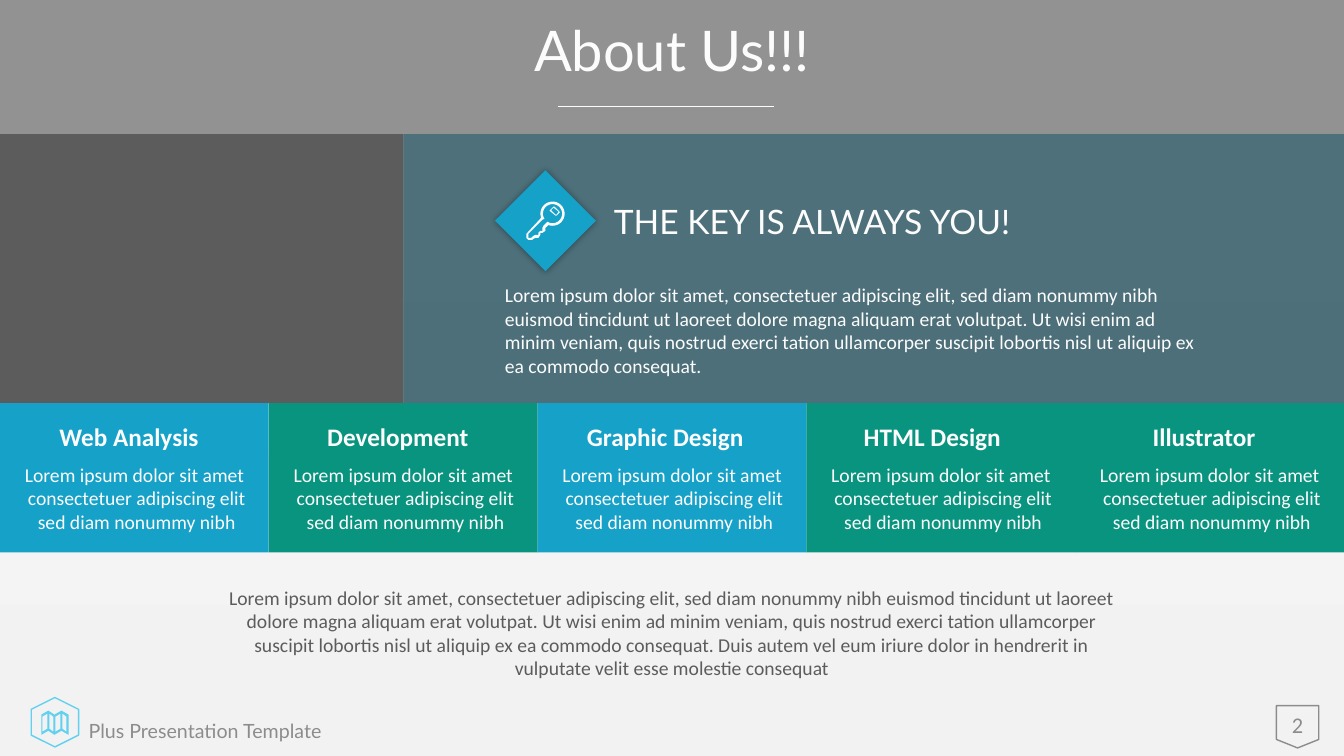
from dataclasses import dataclass
from math import cos, radians, sin

from lxml.etree import SubElement
from pptx import Presentation
from pptx.dml.color import RGBColor
from pptx.enum.shapes import MSO_CONNECTOR, MSO_SHAPE
from pptx.enum.text import MSO_ANCHOR, MSO_AUTO_SIZE, PP_ALIGN
from pptx.oxml.ns import qn
from pptx.util import Pt

PX = 9144
PAGE_WIDTH, PAGE_HEIGHT = 1333, 750

WHITE = RGBColor(0xFC, 0xFC, 0xFC)
PALE = RGBColor(0xF2, 0xF2, 0xF2)
BLACK = RGBColor(0x00, 0x00, 0x00)
DARK = RGBColor(0x20, 0x20, 0x20)
SLATE = RGBColor(0x5C, 0x5C, 0x5C)
GREY = RGBColor(0x8C, 0x8C, 0x8C)
TEAL = RGBColor(0x0B, 0x50, 0x64)
BLUE = RGBColor(0x15, 0xA1, 0xC8)
GREEN = RGBColor(0x09, 0x94, 0x80)
SKY = RGBColor(0x62, 0xD0, 0xEF)

HERO_TEXT = (
    "Lorem ipsum dolor sit amet, consectetuer adipiscing elit, sed diam nonummy nibh "
    "euismod tincidunt ut laoreet dolore magna aliquam erat volutpat. Ut wisi enim ad "
    "minim veniam, quis nostrud exerci tation ullamcorper suscipit lobortis nisl ut "
    "aliquip ex ea commodo consequat."
)
SUMMARY_TEXT = (
    HERO_TEXT + " Duis autem vel eum iriure dolor in hendrerit in vulputate velit esse "
    "molestie consequat"
)
CARD_TEXT = (
    "Lorem ipsum dolor sit amet\n consectetuer adipiscing elit\n sed diam nonummy nibh"
)
CARDS = [
    ("Web Analysis", BLUE, 49, 159),
    ("Development", GREEN, 48, 161),
    ("Graphic Design", BLUE, 39, 177),
    ("HTML Design", GREEN, 47, 157),
    ("Illustrator", GREEN, 67, 123),
]


@dataclass
class Box:
    """A rectangle on the page, in px."""

    left: float
    top: float
    width: float
    height: float

    def inner(self, left, top, width, height):
        """Return a box placed relative to this one."""
        return Box(self.left + left, self.top + top, width, height)

    def emu(self):
        """Return left, top, width and height in EMU."""
        return [round(n * PX) for n in (self.left, self.top, self.width, self.height)]


def write_text(frame, text, size, color, font="Calibri", bold=False,
               align=PP_ALIGN.LEFT, spacing=None):
    """Fill a text frame, one paragraph per line of text."""
    for index, line in enumerate(text.split("\n")):
        para = frame.add_paragraph() if index else frame.paragraphs[0]
        para.alignment = align
        para.line_spacing = spacing
        span = para.add_run()
        span.text = line
        span.font.size = Pt(size)
        span.font.name = font
        span.font.bold = bold
        span.font.color.rgb = color


def add_text(page, box, text, wrap=True, **text_format):
    """Add a text box that grows with its text."""
    frame = page.shapes.add_textbox(*box.emu()).text_frame
    frame.word_wrap = wrap
    frame.auto_size = MSO_AUTO_SIZE.SHAPE_TO_FIT_TEXT
    write_text(frame, text, **text_format)
    return frame


def paint(shape, fill=None, line=None, alpha=None):
    """Set the fill, outline and opacity of a shape."""
    shape.shadow.inherit = False
    if fill is None:
        shape.fill.background()
    else:
        shape.fill.solid()
        shape.fill.fore_color.rgb = fill
    if line is None:
        shape.line.fill.background()
    else:
        shape.line.color.rgb = line
        shape.line.width = Pt(1)
    if alpha is not None:
        color = shape.element.spPr.find(qn("a:solidFill")).find(qn("a:srgbClr"))
        SubElement(color, qn("a:alpha"), val=str(alpha * 1000))


def add_block(page, box, kind=MSO_SHAPE.RECTANGLE, **look):
    """Add a painted preset shape."""
    shape = page.shapes.add_shape(kind, *box.emu())
    paint(shape, **look)
    return shape


def add_icon(page, box, contours, color):
    """Add a filled outline whose inner contours are holes."""
    scaled = [[(x * PX, y * PX) for x, y in contour] for contour in contours]
    builder = page.shapes.build_freeform(*scaled[0][0], scale=1.0)
    for index, contour in enumerate(scaled):
        if index:
            builder.move_to(*contour[0])
        builder.add_line_segments(contour[1:], close=True)
    paint(builder.convert_to_shape(*box.emu()[:2]), fill=color)


def arc(radius, start, end):
    """Return points along the round bow of the key."""
    steps = 36
    angles = [radians(start + (end - start) * n / steps) for n in range(steps + 1)]
    return [(26 + radius * cos(a), 12 + radius * sin(a)) for a in angles]


def add_shadow(shape):
    """Give a shape a soft shadow all around."""
    effects = shape.element.spPr.find(qn("a:effectLst"))
    shadow = SubElement(effects, qn("a:outerShdw"), blurRad=str(int(Pt(5))), dist="0",
                        algn="ctr", rotWithShape="0")
    color = SubElement(shadow, qn("a:srgbClr"), val=str(BLACK))
    SubElement(color, qn("a:alpha"), val="40000")


def add_footer(page, box):
    """Place the map badge, footer text and page number."""
    add_block(page, box.inner(1266, 7, 42, 42),
              MSO_SHAPE.FLOWCHART_OFFPAGE_CONNECTOR, line=GREY)
    add_block(page, box.inner(30, 0, 49, 47), MSO_SHAPE.HEXAGON, line=SKY).rotation = 270
    sheet = [(0, 4), (7, 0), (13, 4), (20, 0), (27, 4),
             (27, 24), (20, 20), (13, 24), (7, 20), (0, 24)]
    folds = [(1, 6, 6, 3), (8, 12, 3, 6), (14, 19, 6, 3), (21, 25, 3, 6)]
    panes = [[(x1, y1), (x2, y2), (x2, y2 + 15), (x1, y1 + 15)]
             for x1, x2, y1, y2 in folds]
    add_icon(page, box.inner(41, 12, 27, 24), [sheet] + panes, SKY)
    add_text(page, box.inner(78, 15, 255, 34), "Plus Presentation Template",
             wrap=False, size=14, font="Lato", color=GREY)
    number = add_text(page, box.inner(1263, 5, 48, 42), "2", size=16, color=GREY,
                      align=PP_ALIGN.CENTER)
    number.auto_size = MSO_AUTO_SIZE.NONE
    number.vertical_anchor = MSO_ANCHOR.MIDDLE


def add_header(page, box):
    """Place the title and the rule under it."""
    title = page.shapes.title
    title.left, title.top, title.width, title.height = box.inner(201, 0, 931, 106).emu()
    title.text_frame.vertical_anchor = MSO_ANCHOR.MIDDLE
    write_text(title.text_frame, "About Us!!!", size=40, font="Lato", color=WHITE,
               align=PP_ALIGN.CENTER, spacing=0.9)
    left, top, width, _ = box.inner(553, 106, 215, 0).emu()
    rule = page.shapes.add_connector(MSO_CONNECTOR.STRAIGHT, left, top, left + width, top)
    rule.line.color.rgb = WHITE
    rule.line.width = Pt(0.5)
    SubElement(rule.element.spPr, qn("a:effectLst"))


def add_key_badge(page, box):
    """Place the key on its diamond."""
    add_shadow(add_block(page, box, MSO_SHAPE.DIAMOND, fill=BLUE))
    outer = arc(12, 160, 470) + [
        (19, 26), (19, 29), (16, 31), (14, 31), (14, 33), (12, 36), (9, 36),
        (7, 37), (6, 38), (2, 38), (0, 36), (0, 32)]
    inner = arc(9.5, 148, 482) + [
        (17, 24), (16, 26), (16, 29), (14, 29), (12, 31), (12, 33), (9, 33),
        (7, 34), (5, 36), (2, 36), (2, 32), (16, 18)]
    slot = [(33, 10), (28, 5), (27, 5), (24, 8), (23, 9), (29, 14), (30, 14), (33, 11)]
    slot_hole = [(29, 13), (25, 9), (25, 8), (27, 6), (32, 10), (30, 13)]
    add_icon(page, box.inner(31, 31, 38, 38), [outer, inner, slot, slot_hole], WHITE)


def add_hero(page, box):
    """Place the key message beside the grey panel."""
    add_block(page, box.inner(400, 0, box.width - 400, box.height), fill=TEAL, alpha=50)
    add_text(page, box.inner(599, 61, 416, 50), "THE KEY IS ALWAYS YOU!",
             wrap=False, size=24, font="Lato", color=WHITE)
    add_key_badge(page, box.inner(491, 36, 100, 100))
    add_text(page, box.inner(491, 143, 713, 104), HERO_TEXT, size=14, color=WHITE)
    add_block(page, box.inner(0, 0, 400, box.height), fill=SLATE)


def add_cards(page, box):
    """Place the row of service cards."""
    width = box.width / len(CARDS)
    for index, (name, color, name_left, name_width) in enumerate(CARDS):
        card = box.inner(index * width, 0, width, box.height)
        add_block(page, card, fill=color)
        add_text(page, card.inner(name_left, 13, name_width, 40), name, wrap=False,
                 size=18, color=WHITE, bold=True)
        add_text(page, card.inner(12, 54, 243, 81), CARD_TEXT, wrap=False,
                 size=14, color=WHITE, align=PP_ALIGN.CENTER)


def add_background(page):
    """Give the page a pale upward gradient."""
    fill = page.background.fill
    fill.gradient()
    fill.gradient_angle = 90
    for stop, color, position in zip(fill.gradient_stops, (PALE, WHITE), (0, 1)):
        stop.color.rgb = color
        stop.position = position


def main():
    """Build the deck and save it."""
    deck = Presentation()
    deck.slide_width, deck.slide_height = PAGE_WIDTH * PX, PAGE_HEIGHT * PX
    page = deck.slides.add_slide(deck.slide_layouts[5])
    add_background(page)
    add_block(page, Box(0, 0, PAGE_WIDTH, 400), fill=DARK, alpha=48)
    title = page.shapes.title.element
    title.getparent().append(title)
    add_header(page, Box(0, 0, PAGE_WIDTH, 133))
    add_hero(page, Box(0, 133, PAGE_WIDTH, 267))
    add_cards(page, Box(0, 400, PAGE_WIDTH, 148))
    add_text(page, Box(208, 576, 917, 104), SUMMARY_TEXT, size=14, color=SLATE,
             align=PP_ALIGN.CENTER)
    add_footer(page, Box(0, 693, PAGE_WIDTH, 57))
    deck.save("out.pptx")


if __name__ == "__main__":
    main()
